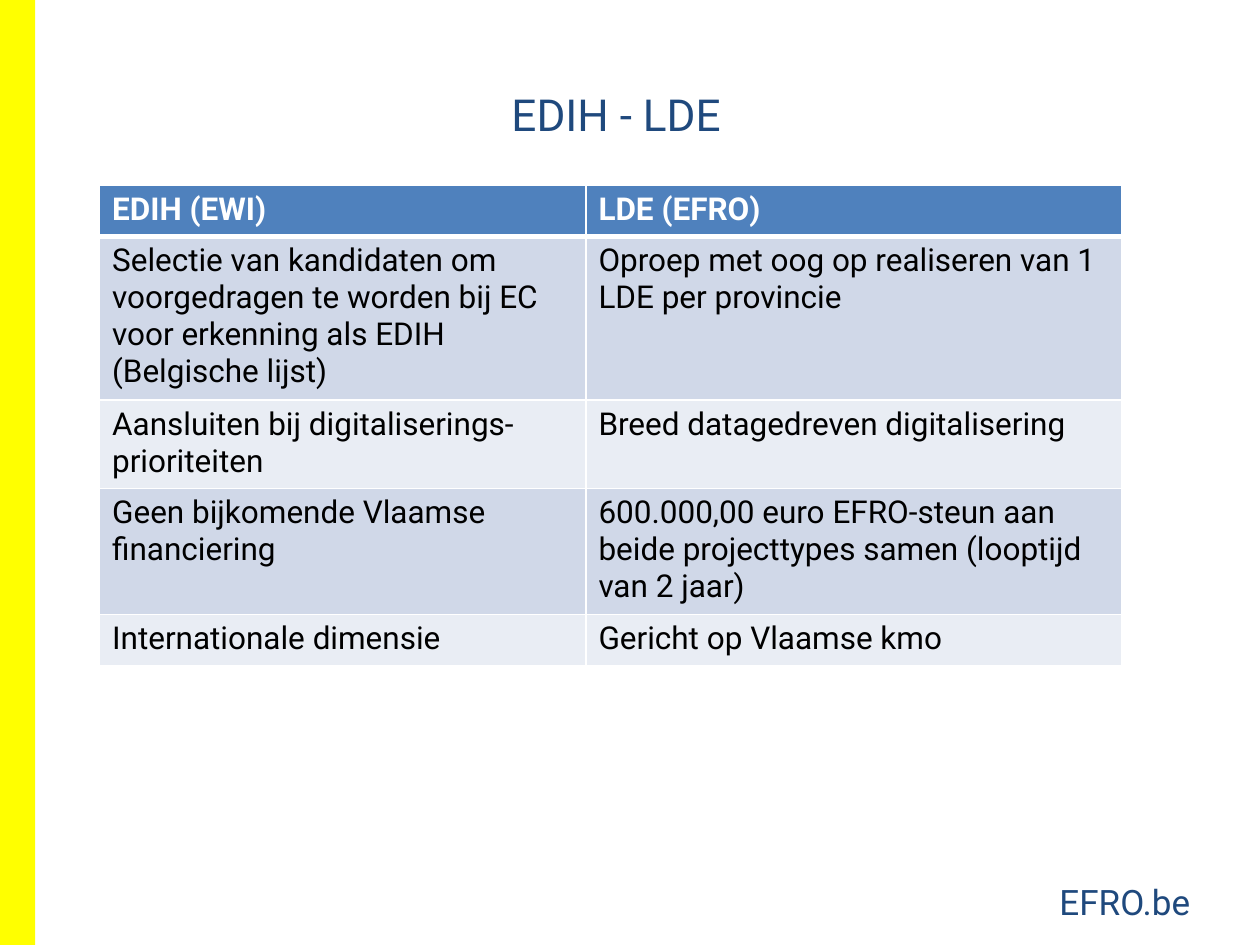
from lxml import etree
from pptx import Presentation
from pptx import util as u
from pptx.dml.color import RGBColor
from pptx.enum import shapes, text
from pptx.oxml.ns import qn

WIDTH, HEIGHT = u.Inches(10), u.Inches(7.5)
FONT = "Roboto"
COLORS = {
    "accent": "FFFF00",
    "heading": "1F497D",
    "header": "4F81BD",
    "band_dark": "D0D8E8",
    "band_light": "E9EDF4",
    "body": "000000",
    "white": "FFFFFF",
}
ROWS = [
    ("EDIH (EWI)", "LDE (EFRO)"),
    (
        "Selectie van kandidaten om voorgedragen te worden bij EC "
        "voor erkenning als EDIH (Belgische lijst)",
        "Oproep met oog op realiseren van 1 LDE per provincie",
    ),
    ("Aansluiten bij digitaliserings-prioriteiten", "Breed datagedreven digitalisering"),
    (
        "Geen bijkomende Vlaamse financiering",
        "600.000,00 euro EFRO-steun aan beide projecttypes samen (looptijd van 2 jaar)",
    ),
    ("Internationale dimensie", "Gericht op Vlaamse kmo"),
]
COLUMN_WIDTHS = (38.6, 42.5)
ROW_HEIGHTS = (5.4, 17, 9.2, 13.1, 5.4)


def across(percent):
    return round(WIDTH * percent / 100)


def down(percent):
    return round(HEIGHT * percent / 100)


def place(left, top, width, height):
    """Turn percentages of the slide into a position and size."""
    return across(left), down(top), across(width), down(height)


def color(name):
    return RGBColor.from_string(COLORS[name])


def style_text(frame, size, color_name, bold=False):
    for para in frame.paragraphs:
        for span in para.runs:
            span.font.name = FONT
            span.font.size = u.Pt(size)
            span.font.bold = bold
            span.font.color.rgb = color(color_name)


def add_text(page, wording, area, size):
    frame = page.shapes.add_textbox(*area).text_frame
    frame.word_wrap = True
    frame.text = wording
    style_text(frame, size, "heading")
    return frame


def add_title(page, wording):
    frame = add_text(page, wording, place(11.4, 8, 75, 13.6), 25.2)
    frame.vertical_anchor = text.MSO_ANCHOR.MIDDLE
    frame.margin_bottom = u.Inches(0.46)
    frame.paragraphs[0].alignment = text.PP_ALIGN.CENTER


def add_side_bar(page):
    bar = page.shapes.add_shape(shapes.MSO_SHAPE.RECTANGLE, *place(0, 0, 2.8, 100))
    bar.shadow.inherit = False
    bar.fill.solid()
    bar.fill.fore_color.rgb = color("accent")
    bar.line.fill.background()


def add_borders(cell, widths):
    """Draw white edges; widths maps an edge letter (L, R, T, B) to points."""
    properties = cell._tc.get_or_add_tcPr()
    for position, (edge, points) in enumerate(widths.items()):
        line = etree.Element(qn(f"a:ln{edge}"), w=str(u.Pt(points)))
        fill = etree.SubElement(line, qn("a:solidFill"))
        etree.SubElement(fill, qn("a:srgbClr"), val=COLORS["white"])
        properties.insert(position, line)


def row_fill(index):
    if index == 0:
        return "header"
    return "band_dark" if index % 2 else "band_light"


def add_comparison(page):
    area = place(7.9, 19.6, sum(COLUMN_WIDTHS), sum(ROW_HEIGHTS))
    table = page.shapes.add_table(len(ROWS), len(COLUMN_WIDTHS), *area).table
    for column, width in zip(table.columns, COLUMN_WIDTHS):
        column.width = across(width)
    for index, wordings in enumerate(ROWS):
        table.rows[index].height = down(ROW_HEIGHTS[index])
        is_header = index == 0
        for cell, wording in zip(table.rows[index].cells, wordings):
            cell.text = wording
            style_text(cell.text_frame, 18, "white" if is_header else "body", is_header)
            cell.fill.solid()
            cell.fill.fore_color.rgb = color(row_fill(index))
            add_borders(cell, {
                "L": 1,
                "R": 1,
                "T": 3 if index == 1 else 1,
                "B": 3 if is_header else 1,
            })


def main():
    deck = Presentation()
    deck.slide_width, deck.slide_height = WIDTH, HEIGHT
    page = deck.slides.add_slide(deck.slide_layouts[6])
    add_text(page, "EFRO.be", place(83.1, 92.5, 15.7, 5.9), 20)
    add_side_bar(page)
    add_title(page, "EDIH - LDE")
    add_comparison(page)
    deck.save("out.pptx")


if __name__ == "__main__":
    main()
